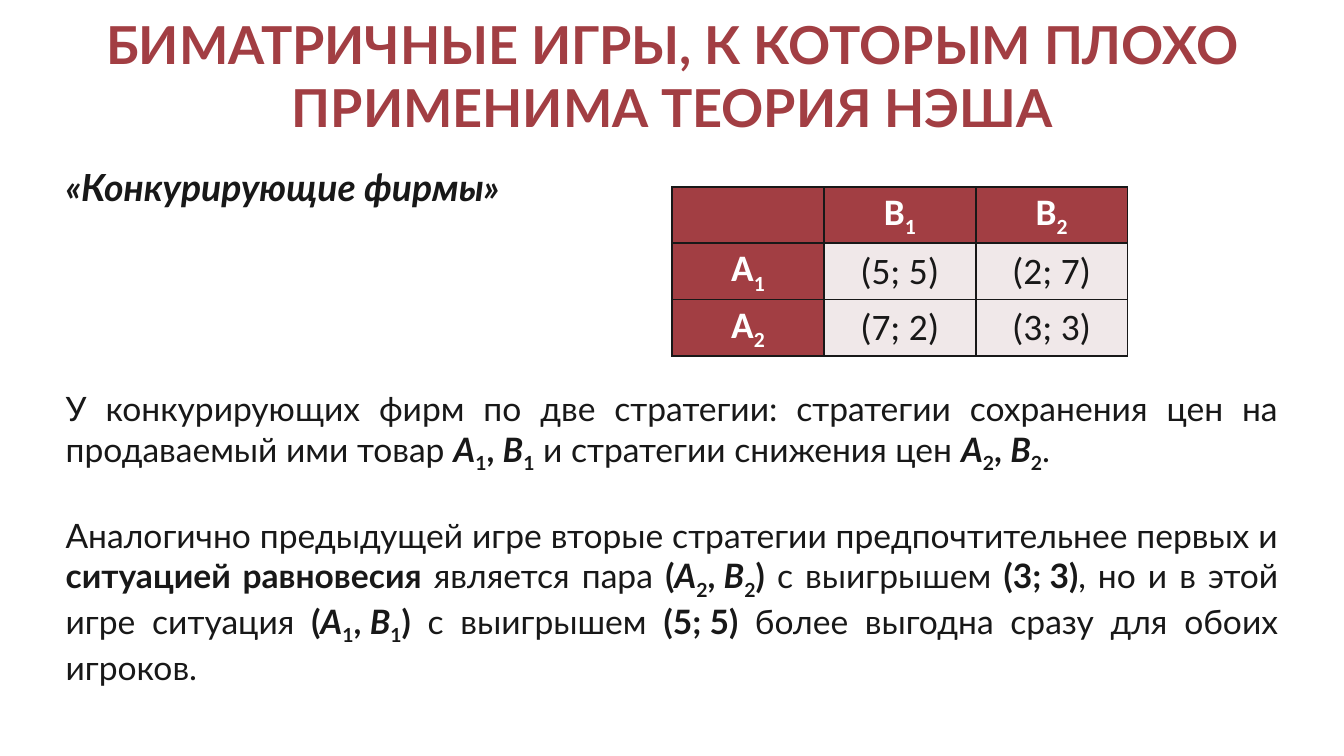
from lxml.etree import SubElement
from pptx import Presentation
from pptx.dml.color import RGBColor
from pptx.enum.text import MSO_ANCHOR as ANCHOR, PP_ALIGN as ALIGN
from pptx.oxml.ns import qn
from pptx.util import Inches, Pt

COLORS = {"red": "A23E43", "ink": "181818", "white": "FFFFFF", "pale": "F0E8E9"}
MARGIN, WIDTH = 0.39, 9.22
NBSP = chr(160)  # keeps pairs on one line, unstretched


def rgb(name):
    return RGBColor.from_string(COLORS[name])


def add_runs(p, runs, size, font="Lato", color="ink", align=ALIGN.LEFT):
    """Each run is (text, style): b = bold, i = italic, s = subscript."""
    p.alignment = align
    for text, style in runs:
        r = p.add_run()
        r.text = text
        f = r.font
        f.name, f.size = font, Pt(size)
        f.bold, f.italic = "b" in style, "i" in style
        f.color.rgb = rgb(color)
        if "s" in style:
            r._r.get_or_add_rPr().set("baseline", "-25000")


def add_text(slide, box, paragraphs, size, gap=0, **fmt):
    tf = slide.shapes.add_textbox(*map(Inches, box)).text_frame
    tf.word_wrap = True
    tf.vertical_anchor = ANCHOR.MIDDLE
    for i, runs in enumerate(paragraphs):
        p = tf.add_paragraph() if i else tf.paragraphs[0]
        if i:
            p.space_before = Pt(gap)
        add_runs(p, runs, size, **fmt)


def strategy(letter, number):
    return [(letter, "bi"), (number, "bs")]


def strategies(number, space=" "):
    """The same strategy of both firms."""
    return [*strategy("А", number), ("," + space, "b"), *strategy("В", number)]


def situation(number):
    return [("(", "b"), *strategies(number, NBSP), (")", "b")]


def payoff(a, b):
    return (f"({a};{NBSP}{b})", "b")


def add_borders(cell):
    tcPr = cell._tc.get_or_add_tcPr()
    for side in ("lnL", "lnR", "lnT", "lnB"):
        ln = SubElement(tcPr, qn(f"a:{side}"), w=str(Pt(1)))
        fill = SubElement(ln, qn("a:solidFill"))
        SubElement(fill, qn("a:srgbClr"), val=COLORS["ink"])


def payoff_table(slide, box, rows):
    table = slide.shapes.add_table(len(rows), len(rows[0]), *map(Inches, box)).table
    for i, row in enumerate(rows):
        for j, text in enumerate(row):
            cell = table.cell(i, j)
            header = i == 0 or j == 0
            add_borders(cell)
            cell.fill.solid()
            cell.fill.fore_color.rgb = rgb("red" if header else "pale")
            cell.vertical_anchor = ANCHOR.MIDDLE
            cell.margin_left = cell.margin_right = Inches(0.07)
            cell.margin_top = cell.margin_bottom = 0
            if not text:
                continue
            runs = [(text[0], "b"), (text[1], "bs")] if header else [(text, "")]
            add_runs(cell.text_frame.paragraphs[0], runs, 20, font="Calibri",
                     color="white" if header else "ink", align=ALIGN.CENTER)


def explanation(slide, box):
    choices = [
        ("У конкурирующих фирм по две стратегии: стратегии сохранения цен "
         "на продаваемый ими товар ", ""),
        *strategies("1"), (" и стратегии снижения цен ", ""),
        *strategies("2", NBSP), (".", ""),
    ]
    equilibrium = [
        ("Аналогично предыдущей игре вторые стратегии предпочтительнее первых и ", ""),
        ("ситуацией равновесия", "b"), (" является пара ", ""), *situation("2"),
        (" с выигрышем ", ""), payoff(3, 3), (", но и в этой игре ситуация ", ""),
        *situation("1"), (" с выигрышем ", ""), payoff(5, 5),
        (" более выгодна сразу для обоих игроков.", ""),
    ]
    add_text(slide, box, [choices, equilibrium], 18, gap=21.6, align=ALIGN.JUSTIFY)


def main():
    prs = Presentation()
    prs.slide_width = Inches(10)
    prs.slide_height = prs.slide_width * 9 // 16
    slide = prs.slides.add_slide(prs.slide_layouts[6])

    # Title and name of the game
    title = "БИМАТРИЧНЫЕ ИГРЫ, К КОТОРЫМ ПЛОХО ПРИМЕНИМА ТЕОРИЯ НЭША"
    add_text(slide, (MARGIN, 0.21, WIDTH, 0.7), [[(title, "b")]], 28,
             color="red", align=ALIGN.CENTER)
    add_text(slide, (MARGIN, 1.17, 7.56, 0.44), [[("«Конкурирующие фирмы»", "bi")]], 20)

    # Explanation and payoffs
    explanation(slide, (MARGIN, 2.89, WIDTH, 2.22))
    payoff_table(slide, (5, 1.39, 3.39, 1.26), [
        ["", "B1", "B2"],
        ["A1", "(5; 5)", "(2; 7)"],
        ["A2", "(7; 2)", "(3; 3)"],
    ])
    prs.save("out.pptx")


if __name__ == "__main__":
    main()
